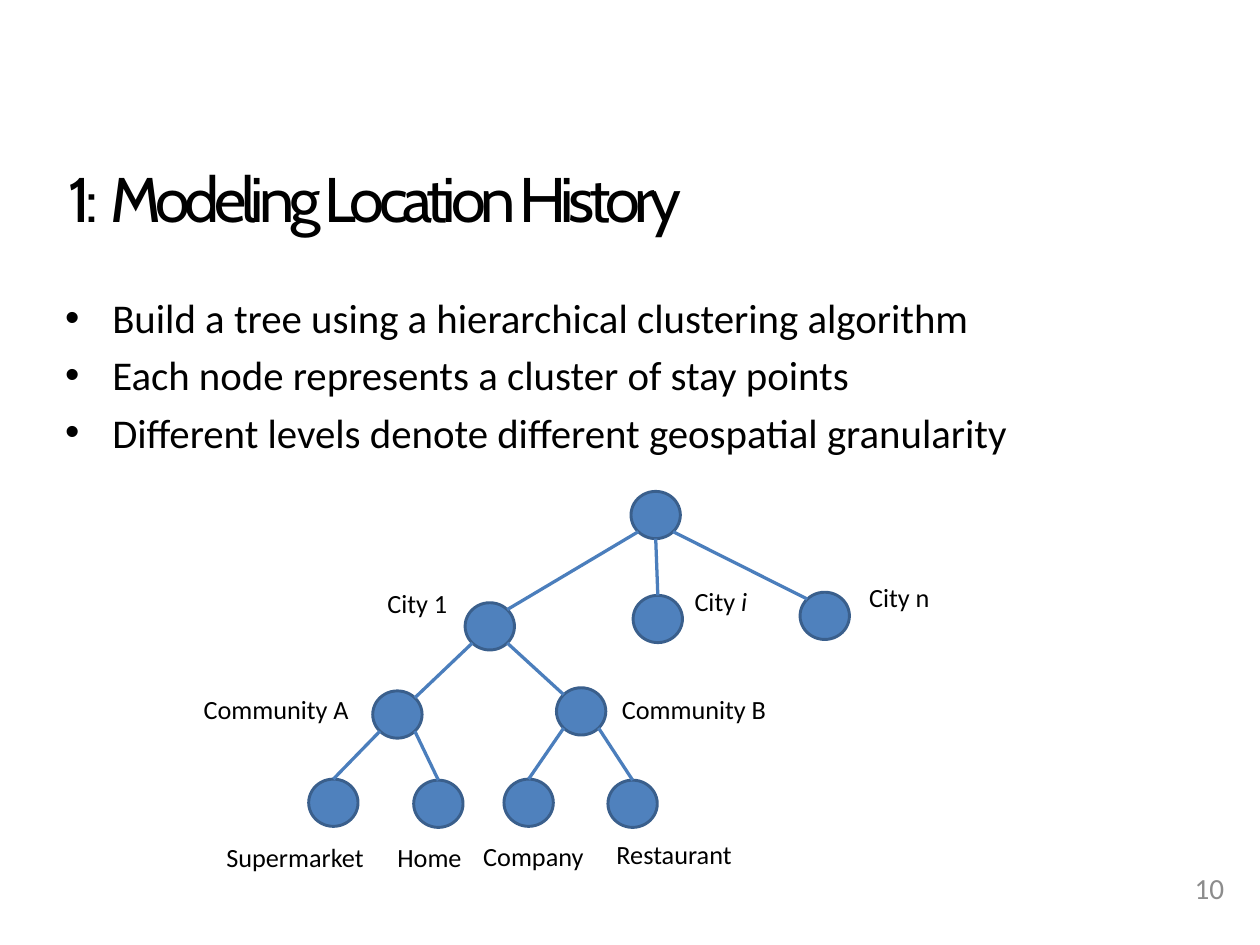
from dataclasses import dataclass
from math import sqrt

from lxml import etree
from pptx import Presentation, util as u
from pptx.dml.color import RGBColor
from pptx.enum import shapes, text
from pptx.oxml.ns import qn


@dataclass(frozen=True)
class Theme:
    ink: str = "000000"
    grey: str = "8C8C8C"
    fill: str = "4F81BD"
    edge: str = "3A5F8C"
    link: str = "4B7EBC"
    head: str = "Cabin"
    body: str = "Calibri"
    title: float = 43.2
    gap: float = 36
    bullet: float = 28
    number: float = 20
    label: float = 18


WIDE, HIGH = 0.47, 0.45  # node size
PAD = (0.12, 0.06)

# name: left, top, parent
NODES = {
    "Root": (6.01, 4.68, None),
    "City 1": (4.43, 5.74, "Root"),
    "City i": (6.03, 5.67, "Root"),
    "City n": (7.62, 5.64, "Root"),
    "Community A": (3.55, 6.58, "City 1"),
    "Community B": (5.3, 6.55, "City 1"),
    "Supermarket": (2.94, 7.42, "Community A"),
    "Home": (3.94, 7.43, "Community A"),
    "Company": (4.8, 7.42, "Community B"),
    "Restaurant": (5.79, 7.43, "Community B"),
}

# runs, left, top, width
LABELS = [
    (["City 1"], 3.5, 5.52, 0.95),
    (["City ", "i"], 6.39, 5.5, 0.95),
    (["City n"], 8.09, 5.46, 0.95),
    (["Community A"], 1.79, 6.53, 1.68),
    (["Community B"], 5.77, 6.53, 1.68),
    (["Supermarket"], 1.97, 7.94, 1.68),
    (["Home"], 3.6, 7.94, 0.98),
    (["Company"], 4.44, 7.93, 1.28),
    (["Restaurant"], 5.64, 7.91, 1.56),
]

POINTS = [
    "Build a tree using a hierarchical clustering algorithm",
    "Each node represents a cluster of stay points",
    "Different levels denote different geospatial granularity",
]


class Deck:
    def __init__(self, theme):
        self.theme = theme
        self.prs = Presentation()
        self.prs.slide_width, self.prs.slide_height = u.Inches(12), u.Inches(9)
        self.slide = self.prs.slides.add_slide(self.prs.slide_layouts[6])

    def box(self, x, y, w, h, pad=(0.1, 0.05), mid=True):
        shape = self.slide.shapes.add_textbox(*map(u.Inches, (x, y, w, h)))
        frame = shape.text_frame
        frame.word_wrap = True
        frame.margin_left = frame.margin_right = u.Inches(pad[0])
        frame.margin_top = frame.margin_bottom = u.Inches(pad[1])
        anchor = text.MSO_ANCHOR
        frame.vertical_anchor = anchor.MIDDLE if mid else anchor.TOP
        return frame

    def font(self, item, size, color=None, face=None):
        item.font.size = u.Pt(size)
        item.font.name = face or self.theme.body
        item.font.color.rgb = RGBColor.from_string(color or self.theme.ink)

    def title(self, parts):
        """Write (words, size) parts as one tightly spaced line."""
        para = self.box(0.53, 1.56, 11, 0.73, PAD).paragraphs[0]
        para.line_spacing = 0.9
        for words, size in parts:
            run = para.add_run()
            run.text = words
            self.font(run, size, face=self.theme.head)
            run._r.get_or_add_rPr().set("spc", "-360")

    def bullets(self, lines):
        frame = self.box(0.5, 2.73, 11, 5.73, PAD, mid=False)
        for i, line in enumerate(lines):
            para = frame.add_paragraph() if i else frame.paragraphs[0]
            para.text = line
            props = para._p.get_or_add_pPr()
            props.set("marL", str(u.Inches(0.45)))
            props.set("indent", str(u.Inches(-0.45)))
            etree.SubElement(props, qn("a:buFont")).set("typeface", "Arial")
            etree.SubElement(props, qn("a:buChar")).set("char", "•")
            if i:
                para.space_before = u.Pt(0.2 * self.theme.bullet)
            self.font(para, self.theme.bullet)

    def number(self, words):
        para = self.box(9.28, 8.16, 2.5, 0.6, PAD).paragraphs[0]
        para.text = words
        para.alignment = text.PP_ALIGN.RIGHT
        self.font(para, self.theme.number, self.theme.grey)

    def label(self, runs, x, y, w):
        """Centre a label; a second run is set in italics."""
        para = self.box(x, y, w, 0.45).paragraphs[0]
        para.alignment = text.PP_ALIGN.CENTER
        self.font(para, self.theme.label)
        for i, words in enumerate(runs):
            run = para.add_run()
            run.text = words
            if i:
                run.font.italic = True

    def node(self, x, y):
        dot = self.slide.shapes.add_shape(
            shapes.MSO_SHAPE.OVAL, *map(u.Inches, (x, y, WIDE, HIGH)))
        dot.shadow.inherit = False
        dot.fill.solid()
        dot.fill.fore_color.rgb = RGBColor.from_string(self.theme.fill)
        dot.line.color.rgb = RGBColor.from_string(self.theme.edge)
        dot.line.width = u.Pt(2)
        return dot

    def link(self, top, low, leaf):
        """Join two nodes; leaves and nodes straight below are met at the top."""
        shift = low.left - top.left
        side = 0 if abs(shift) < u.Inches(0.1) else 1 if shift > 0 else -1
        start = rim(top, side, 1)
        end = rim(low, -side, -1)
        line = self.slide.shapes.add_connector(
            shapes.MSO_CONNECTOR.STRAIGHT, *start, *end)
        if leaf or not side:
            line.end_connect(low, 0)
        line.line.color.rgb = RGBColor.from_string(self.theme.link)
        line.line.width = u.Pt(2.25)
        etree.SubElement(line._element.spPr, qn("a:effectLst"))


def rim(dot, side, down):
    """Point on a node's rim: middle when side is 0, else on the diagonal."""
    part = 1 / sqrt(2) if side else 1
    return (round(dot.left + dot.width / 2 * (1 + side * part)),
            round(dot.top + dot.height / 2 * (1 + down * part)))


def main():
    theme = Theme()
    deck = Deck(theme)
    deck.title([("1:", theme.title), (" ", theme.gap),
                ("Modeling Location History", theme.title)])
    deck.bullets(POINTS)
    deck.number("10")
    dots = {name: deck.node(x, y) for name, (x, y, _) in NODES.items()}
    for name, (_, _, top) in NODES.items():
        if top:
            deck.link(dots[top], dots[name], top.startswith("Community"))
    for label in LABELS:
        deck.label(*label)
    deck.prs.save("out.pptx")


if __name__ == "__main__":
    main()
